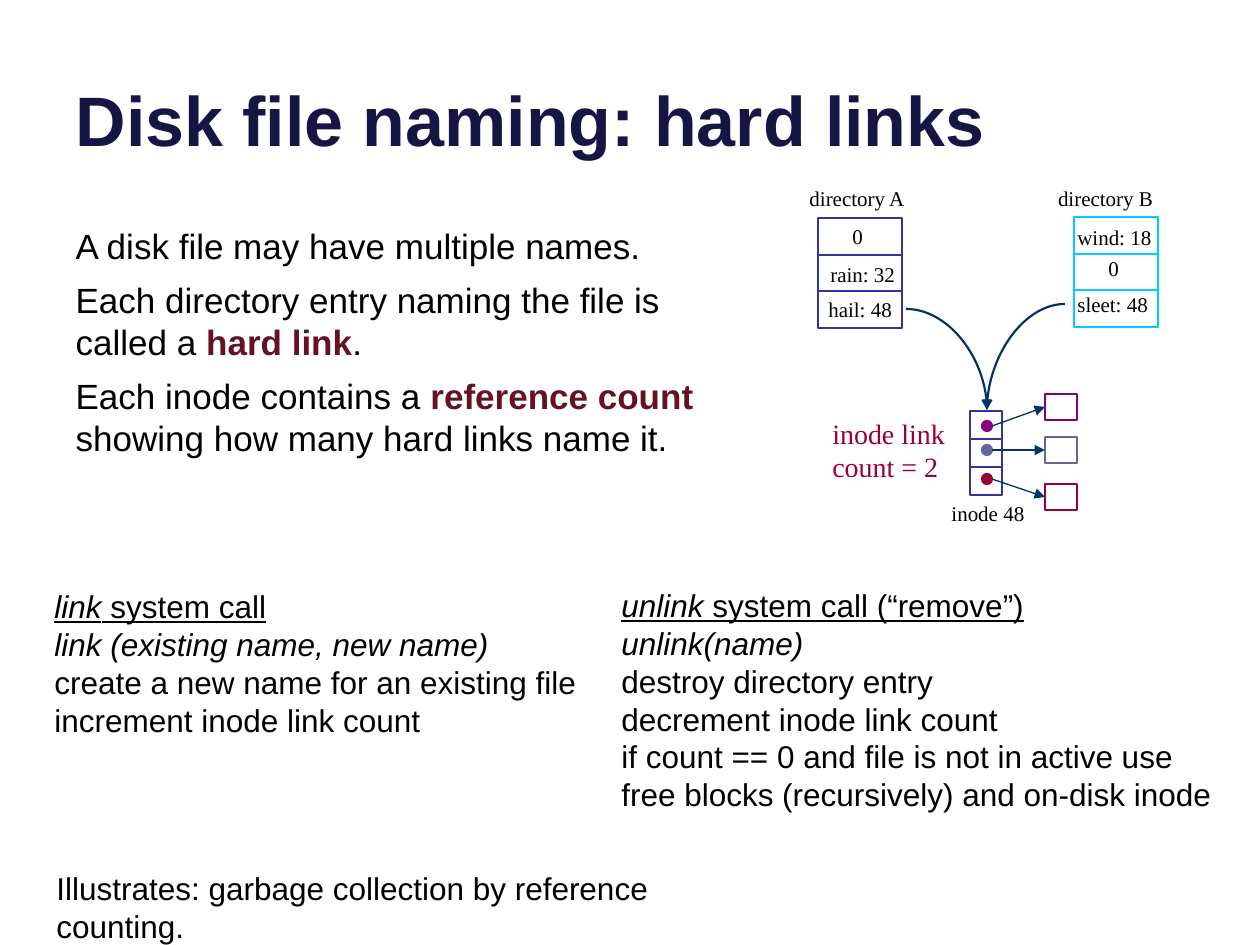
import pptx
import pptx.util
import pptx.dml.color
import pptx.enum.shapes
import pptx.enum.text
import pptx.oxml.ns
from dataclasses import dataclass
from lxml import etree

SHAPE = pptx.enum.shapes.MSO_SHAPE
CONN = pptx.enum.shapes.MSO_CONNECTOR
ALIGN = pptx.enum.text.PP_ALIGN
ANCHOR = pptx.enum.text.MSO_ANCHOR
AUTO = pptx.enum.text.MSO_AUTO_SIZE
SCALE = 914400 / 126


@dataclass(frozen=True)
class Theme:
    sans: str = "Arial"
    serif: str = "Times New Roman"
    title: str = "161645"
    ink: str = "000000"
    paper: str = "FFFFFF"
    strong: str = "651222"
    navy: str = "333399"
    cyan: str = "00CCFF"
    arrow: str = "003367"
    purple: str = "800080"
    slate: str = "666699"
    red: str = "990033"
    title_size: int = 40
    body_size: int = 20
    note_size: int = 18
    count_size: int = 16
    label_size: int = 12
    line: float = 1.25
    thin: float = 0.75


T = Theme()

TITLE = [[("Disk file naming: hard links", "b")]]
BODY = [
    [("A disk file may have multiple names.", "")],
    [("Each directory entry naming the file is called a ", ""), ("hard link", "bs"), (".", "")],
    [("Each inode contains a ", ""), ("reference count", "bs"),
     (" showing how many hard links name it.", "")],
]
CALLS = [
    ((42, 581, 630, 164), [
        [("link", "iu"), (" system call", "u")],
        [("link (existing name, new name)", "i")],
        [("create a new name for an existing file", "")],
        [("increment inode link count", "")],
    ]),
    ((609, 580, 630, 239), [
        [("unlink", "iu"), (" system call (“remove”)", "u")],
        [("unlink(name)", "i")],
        [("destroy directory entry", "")],
        [("decrement inode link count", "")],
        [("if count == 0 and file is not in active use", "")],
        [("free blocks (recursively) and on-disk inode", "")],
    ]),
]
SUMMARY = [[("Illustrates: garbage collection by reference counting.", "")]]
COUNT = [[("inode link", "")], [("count = 2", "")]]

STACKS = {
    "directory A": ((818, 218, 84, 110), T.navy),
    "directory B": ((1074, 217, 84, 110), T.cyan),
    "inode": ((970, 411, 32, 84), T.navy),
}
ENTRIES = [
    ("0", (840, 217, 35, 38)), ("rain: 32", (818, 255, 91, 38)), ("hail: 48", (816, 290, 89, 38)),
    ("wind: 18", (1065, 218, 100, 38)), ("0", (1096, 249, 35, 38)), ("sleet: 48", (1065, 285, 96, 38)),
]
CAPTIONS = [
    ("directory A", (796, 179, 122, 38)), ("directory B", (1045, 179, 121, 38)),
    ("inode 48", (939, 494, 98, 38)),
]
LINKS = [(906, 309), (1065, 304)]
INODE_TOP = (987, 410)
POINTERS = [(T.purple, 421, 394), (T.slate, 445, 437), (T.red, 474, 484)]
DOT_X, DOT = 982, 10
BLOCK_X, BLOCK_W, BLOCK_H = 1045, 32, 26


def px(*values):
    return [pptx.util.Emu(round(v * SCALE)) for v in values]


def rgb(color):
    return pptx.dml.color.RGBColor.from_string(color)


def write(tf, paragraphs, font, size, color, align=ALIGN.LEFT, before=0):
    for i, runs in enumerate(paragraphs):
        p = tf.paragraphs[0] if i == 0 else tf.add_paragraph()
        p.alignment = align
        p.space_before = pptx.util.Pt(before)
        for text, style in runs:
            r = p.add_run()
            r.text = text
            r.font.name = font
            r.font.size = pptx.util.Pt(size)
            r.font.color.rgb = rgb(T.strong if "s" in style else color)
            r.font.bold = "b" in style
            r.font.italic = "i" in style
            r.font.underline = "u" in style


def place(sp, box):
    sp.left, sp.top, sp.width, sp.height = px(*box)
    sp.text_frame.auto_size = AUTO.NONE
    return sp.text_frame


def text_box(s, box, paragraphs, font, size, color=T.ink, align=ALIGN.LEFT, wrap=False):
    tf = s.shapes.add_textbox(*px(*box)).text_frame
    tf.word_wrap = wrap
    tf.auto_size = AUTO.SHAPE_TO_FIT_TEXT
    write(tf, paragraphs, font, size, color, align)


def shape(s, kind, box, fill, line):
    sp = s.shapes.add_shape(kind, *px(*box))
    sp.shadow.inherit = False
    sp.fill.solid()
    sp.fill.fore_color.rgb = rgb(fill)
    sp.line.color.rgb = rgb(line)
    sp.line.width = pptx.util.Pt(T.line)
    return sp


def connect(s, start, end, color, width=T.line, kind=CONN.STRAIGHT, arrow=False):
    c = s.shapes.add_connector(kind, *px(*start, *end))
    c.line.color.rgb = rgb(color)
    c.line.width = pptx.util.Pt(width)
    qn = pptx.oxml.ns.qn
    sppr = c._element.spPr
    if kind == CONN.CURVE:
        sppr.find(qn("a:prstGeom")).set("prst", "curvedConnector2")
    if arrow:
        etree.SubElement(sppr.find(qn("a:ln")), qn("a:tailEnd"), type="triangle")
    etree.SubElement(sppr, qn("a:effectLst"))
    return c


def stack(s, box, color, rows=3):
    x, y, w, h = box
    shape(s, SHAPE.RECTANGLE, box, T.paper, color)
    for i in range(1, rows):
        row_y = y + h * i / rows
        connect(s, (x, row_y), (x + w, row_y), color)


def diagram(s):
    for box, color in STACKS.values():
        stack(s, box, color)
    for text, box in ENTRIES:
        text_box(s, box, [[(text, "")]], T.serif, T.label_size)
    for text, box in CAPTIONS:
        text_box(s, box, [[(text, "")]], T.serif, T.label_size, align=ALIGN.CENTER)
    for start in LINKS:
        connect(s, start, INODE_TOP, T.arrow, kind=CONN.CURVE, arrow=True)
    for color, dot_y, block_y in POINTERS:
        shape(s, SHAPE.OVAL, (DOT_X, dot_y, DOT, DOT), color, color)
        block = shape(s, SHAPE.RECTANGLE, (BLOCK_X, block_y, BLOCK_W, BLOCK_H), T.paper, color)
        c = connect(s, (DOT_X + DOT, dot_y + DOT / 2), (BLOCK_X, block_y + BLOCK_H / 2),
                    T.arrow, T.thin, arrow=True)
        c.end_connect(block, 1)
    text_box(s, (820, 410, 145, 81), COUNT, T.serif, T.count_size, T.red)


def main():
    prs = pptx.Presentation()
    prs.slide_width, prs.slide_height = px(1260, 945)
    s = prs.slides.add_slide(prs.slide_layouts[1])

    tf = place(s.shapes.title, (63, -47, 1134, 214))
    tf.vertical_anchor = ANCHOR.BOTTOM
    write(tf, TITLE, T.sans, T.title_size, T.title)

    diagram(s)

    tf = place(s.placeholders[1], (63, 218, 665, 311))
    write(tf, BODY, T.sans, T.body_size, T.ink, before=7)
    for p in tf.paragraphs:
        ppr = p._p.get_or_add_pPr()
        ppr.set("marL", "0")
        ppr.set("indent", "0")
        etree.SubElement(ppr, pptx.oxml.ns.qn("a:buNone"))

    for box, paragraphs in CALLS:
        text_box(s, box, paragraphs, T.sans, T.note_size, wrap=True)
    text_box(s, (44, 863, 753, 50), SUMMARY, T.sans, T.note_size)
    prs.save("out.pptx")


if __name__ == "__main__":
    main()
